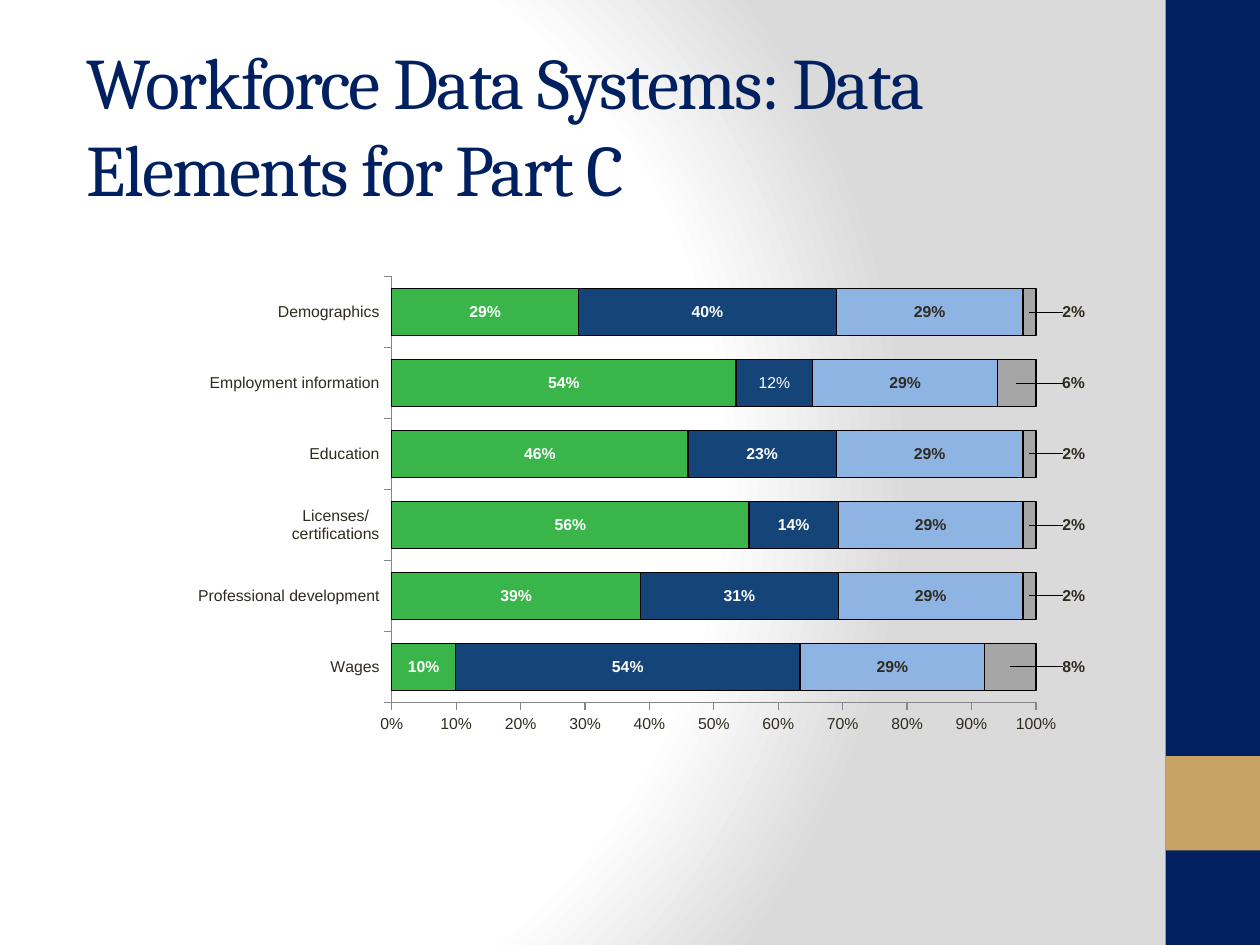
from pptx import Presentation, util as u
from pptx.chart.data import CategoryChartData
from pptx.dml.color import RGBColor
from pptx.enum import chart as ch, shapes, text
from pptx.oxml import parse_xml
from pptx.oxml.ns import nsdecls

COLORS = {"navy": "002060", "gold": "C8A464", "ink": "2F2B20", "white": "FFFFFF",
          "mist": "DADADA", "green": "39B54A", "blue": "154578", "sky": "8EB4E3",
          "grey": "A6A6A6", "outline": "000000", "axis": "868686"}
TITLE = ["Workforce Data Systems: Data", "Elements for Part C"]
CATEGORIES = ["Wages", "Professional development", "Licenses/\ncertifications",
              "Education", "Employment information", "Demographics"]
# name, fill, label colour, values
SERIES = [
    ("Series 1", "green", "white", [0.10, 0.39, 0.56, 0.46, 0.54, 0.29]),
    ("Series 2", "blue", "white", [0.54, 0.31, 0.14, 0.23, 0.12, 0.40]),
    ("Series 3", "sky", "ink", [0.29] * 6),
    ("Series 4", "grey", "ink", [0.08, 0.02, 0.02, 0.02, 0.06, 0.02]),
]
PLOT = {"x": 0.29, "y": 0.09, "w": 0.568, "h": 0.683}
LABEL_GAP = 0.033  # from the bar's end to the centre of an outside label
WIDTH, HEIGHT = 10, 7.5
BAND = 0.1 * HEIGHT
LABEL_FORMAT = {"name": "Arial", "size": u.Pt(9), "bold": True}
AXIS_FORMAT = {"name": "Arial", "size": u.Pt(9), "bold": False}
TITLE_FORMAT = {"name": "Cambria", "size": u.Pt(41.4), "bold": False}


def rgb(name):
    return RGBColor.from_string(COLORS[name])


def style(font, values, color):
    for key, value in values.items():
        setattr(font, key, value)
    font.color.rgb = rgb(color)


def chart_xml(tag, inner="", attributes=""):
    return parse_xml(f"<c:{tag} {nsdecls('c')} {attributes}>{inner}</c:{tag}>")


def manual_layout(**parts):
    inner = "".join(f'<c:{key} val="{value}"/>' for key, value in parts.items())
    return chart_xml("layout", f"<c:manualLayout>{inner}</c:manualLayout>")


def paint_background(slide):
    stops = "".join(f'<a:gs pos="{at * 1000}"><a:srgbClr val="{COLORS[name]}"/></a:gs>'
                    for at, name in [(0, "white"), (75, "white"), (100, "mist")])
    fill = slide.background.fill
    fill.solid()
    properties = slide._element.cSld.bg.bgPr
    properties.replace(properties[0], parse_xml(
        f'<a:gradFill {nsdecls("a")} rotWithShape="1"><a:gsLst>{stops}</a:gsLst>'
        '<a:path path="circle"><a:fillToRect l="20000" t="50000" r="100000" b="50000"/>'
        '</a:path></a:gradFill>'))


def add_band(slide, top, height, color):
    band = slide.shapes.add_shape(shapes.MSO_SHAPE.RECTANGLE, u.Inches(WIDTH - BAND),
                                  u.Inches(top), u.Inches(BAND), u.Inches(height))
    band.shadow.inherit = False
    band.fill.solid()
    band.fill.fore_color.rgb = rgb(color)
    band.line.fill.background()


def add_title(slide):
    box = slide.shapes.add_textbox(*map(u.Inches, (0.59, 0.36, 9, 1.25)))
    frame = box.text_frame
    frame.word_wrap = True
    frame.vertical_anchor = text.MSO_ANCHOR.MIDDLE
    paragraph = frame.paragraphs[0]
    paragraph.text = "\v".join(TITLE)
    for run in paragraph.runs:
        style(run.font, TITLE_FORMAT, "navy")
        run.font._element.set("spc", "-100")


def format_axis(axis):
    axis.has_major_gridlines = False
    axis.major_tick_mark = ch.XL_TICK_MARK.OUTSIDE
    axis.minor_tick_mark = ch.XL_TICK_MARK.NONE
    axis.format.line.color.rgb = rgb("axis")
    axis.format.line.width = u.Pt(0.75)
    style(axis.tick_labels.font, AXIS_FORMAT, "ink")


def move_labels_outside(series, color):
    """Shift each label of the last series to the right of its bar."""
    for index, share in enumerate(series.values):
        style(series.points[index].data_label.font, LABEL_FORMAT, color)
        label = series.data_labels._element.xpath(f'c:dLbl[c:idx/@val="{index}"]')[0]
        shift = round(PLOT["w"] * share / 2 + LABEL_GAP, 3)
        label.insert(1, manual_layout(x=shift, y=0))
        label.insert(2, chart_xml("numFmt", attributes='formatCode="0%" sourceLinked="0"'))


def add_elements_chart(slide):
    data = CategoryChartData(number_format="0%")
    data.categories = CATEGORIES
    for name, _, _, values in SERIES:
        data.add_series(name, values)
    chart = slide.shapes.add_chart(ch.XL_CHART_TYPE.BAR_STACKED_100,
                                   *map(u.Inches, (0.5, 1.75, 9, 4.95)), data).chart
    chart.has_legend = chart.has_title = False
    style(chart.font, {"name": "Calibri", "size": u.Pt(10)}, "ink")

    format_axis(chart.category_axis)
    scale = chart.value_axis
    format_axis(scale)
    scale.minimum_scale, scale.maximum_scale, scale.major_unit = 0, 1, 0.1
    scale.tick_labels.number_format = "0%"
    scale.tick_labels.number_format_is_linked = False

    plot = chart.plots[0]
    plot.gap_width, plot.overlap, plot.vary_by_categories = 50, 100, False
    for series, (_, fill, label_color, _) in zip(plot.series, SERIES):
        series.format.fill.solid()
        series.format.fill.fore_color.rgb = rgb(fill)
        series.format.line.color.rgb = rgb("outline")
        series.format.line.width = u.Pt(0.75)
        labels = series.data_labels
        labels.show_value = True
        labels.number_format, labels.number_format_is_linked = "0%", False
        style(labels.font, LABEL_FORMAT, label_color)
    move_labels_outside(series, label_color)

    employment = plot.series[1].points[CATEGORIES.index("Employment information")]
    paragraph = employment.data_label.text_frame.paragraphs[0]
    paragraph.text = "12%"
    style(paragraph.runs[0].font, AXIS_FORMAT, "white")

    area = chart._chartSpace.chart.plotArea
    for old in area.xpath("c:layout"):
        area.remove(old)
    area.insert(0, manual_layout(layoutTarget="inner", xMode="edge", yMode="edge", **PLOT))


def main():
    deck = Presentation()
    deck.slide_width, deck.slide_height = u.Inches(WIDTH), u.Inches(HEIGHT)
    slide = deck.slides.add_slide(deck.slide_layouts[6])
    paint_background(slide)
    add_band(slide, 0, HEIGHT, "navy")
    add_band(slide, 0.8 * HEIGHT, BAND, "gold")
    add_title(slide)
    add_elements_chart(slide)
    deck.save("out.pptx")


if __name__ == "__main__":
    main()
